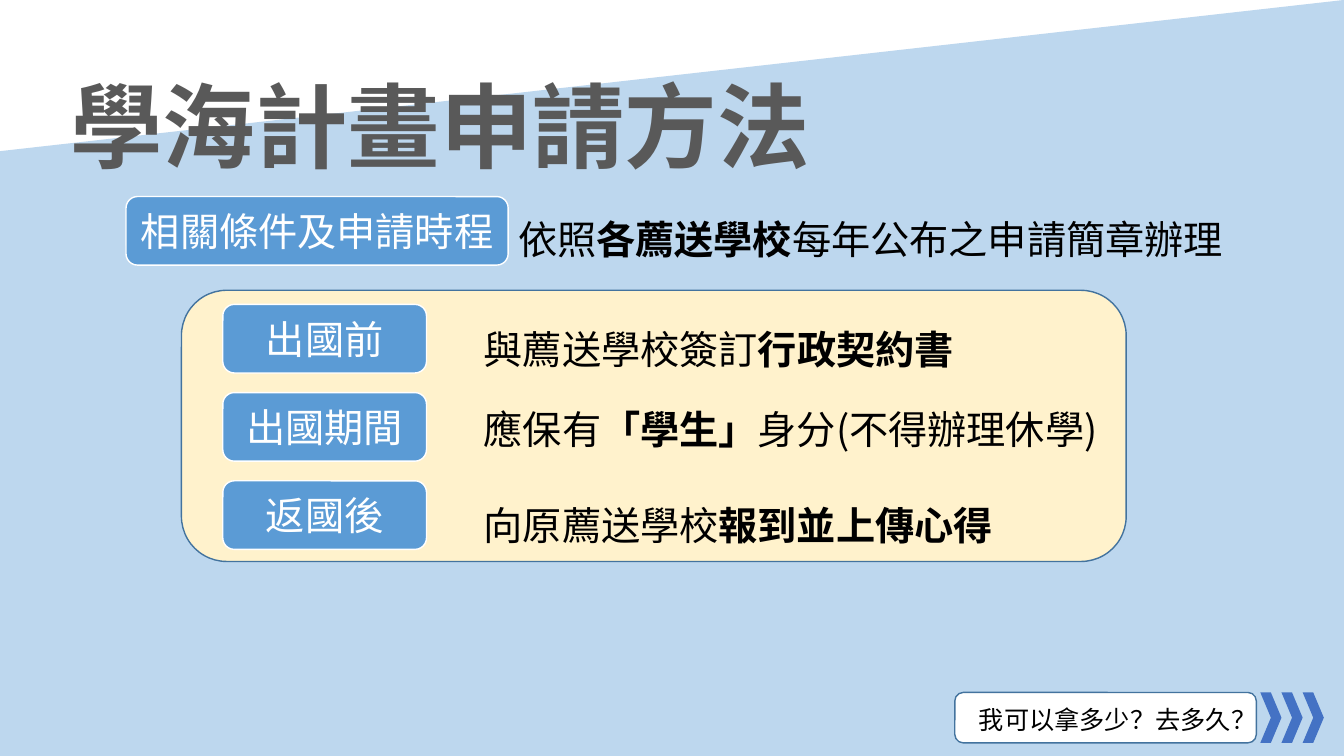
from lxml.etree import SubElement
from pptx import Presentation
from pptx.dml.color import RGBColor
from pptx.enum.shapes import MSO_SHAPE
from pptx.enum.text import MSO_ANCHOR, PP_ALIGN
from pptx.oxml.ns import qn
from pptx.util import Inches, Pt

# Content: a run is (text, bold)
TITLE = [("學海計畫申請方法", True)]
RULE_LABEL = [("相關條件及申請時程", False)]
RULE_TEXT = [("依照", False), ("各薦送學校", True), ("每年公布之申請簡章辦理", False)]
# Stage label, stage text, line spacing
STAGES = [
    ("出國前", [("與薦送學校簽訂", False), ("行政契約書", True)], 1.5),
    ("出國期間", [("應保有", False), ("「學生」", True), ("身分(不得辦理休學)", False)], 1),
    ("返國後", [("向原薦送學校", False), ("報到並上傳心得", True)], 1.5),
]
NEXT = [("我可以拿多少？去多久？", False)]

FONT = "Noto Sans CJK SC"
COLORS = {
    "sky": "BDD7EE", "title": "595959", "text": "000000", "white": "FFFFFF",
    "label": "5B9BD5", "edge": "43739E", "panel": "FFF2CC", "arrow": "4472C4",
}

# Layout in inches
W, H = 13.33, 7.5
LABEL_H = 0.68
STAGE_X, STAGE_TOP, STAGE_PITCH, STAGE_W = 2.21, 3.02, 0.875, 2.02
STAGE_TEXT_X, STAGE_TEXT_W = 4.7, 6.83
ARROW_X, ARROW_W, ARROWS = 12.5, 0.21, 3
FOOT_Y, FOOT_H = 6.87, 0.5

prs = Presentation()
prs.slide_width, prs.slide_height = Inches(W), Inches(H)
s = prs.slides.add_slide(prs.slide_layouts[6])


def rgb(name):
    return RGBColor.from_string(COLORS[name])


def write(sp, runs, size, color, align=PP_ALIGN.LEFT, spacing=None):
    p = sp.text_frame.paragraphs[0]
    p.alignment = align
    if spacing:
        p.line_spacing = float(spacing)
    for text, bold in runs:
        r = p.add_run()
        r.text = text
        r.font.size, r.font.bold, r.font.name = Pt(size), bold, FONT
        r.font.color.rgb = rgb(color)
        SubElement(r.font._element, qn("a:ea"), typeface=FONT)


def shape(kind, x, y, w, h, fill, line=None):
    sp = s.shapes.add_shape(kind, Inches(x), Inches(y), Inches(w), Inches(h))
    sp.shadow.inherit = False
    sp.fill.solid()
    sp.fill.fore_color.rgb = rgb(fill)
    if line:
        sp.line.color.rgb = rgb(line)
        sp.line.width = Pt(1)
    else:
        sp.line.fill.background()
    return sp


def label(runs, x, y, w):
    sp = shape(MSO_SHAPE.ROUNDED_RECTANGLE, x, y, w, LABEL_H, "label", "white")
    tf = sp.text_frame
    tf.word_wrap = True
    tf.margin_left = tf.margin_right = Inches(0.05)
    tf.vertical_anchor = MSO_ANCHOR.MIDDLE
    write(sp, runs, 28, "white", PP_ALIGN.CENTER)


def textbox(runs, x, y, w, h, size=28, color="text", wrap=True, **style):
    sp = s.shapes.add_textbox(Inches(x), Inches(y), Inches(w), Inches(h))
    sp.text_frame.word_wrap = wrap
    write(sp, runs, size, color, **style)


# Slanted background and title
shape(MSO_SHAPE.FLOWCHART_MANUAL_INPUT, 0, 0, W, H, "sky")
textbox(TITLE, 0.6, 0.64, 7.61, 1.21, 66, "title", wrap=False)

# General rule
textbox(RULE_TEXT, 5.04, 1.85, 7.37, 0.81, spacing=1.5)
label(RULE_LABEL, 1.25, 1.95, 3.79)

# Stages panel
shape(MSO_SHAPE.ROUNDED_RECTANGLE, 1.8, 2.88, 9.37, 2.69, "panel", "edge")
for i, (name, runs, spacing) in enumerate(STAGES):
    y = STAGE_TOP + i * STAGE_PITCH
    label([(name, False)], STAGE_X, y, STAGE_W)
    shift, h = (-0.08, 0.81) if spacing > 1 else (0.08, 0.57)
    textbox(runs, STAGE_TEXT_X, y + shift, STAGE_TEXT_W, h, spacing=spacing)

# Pointer to the next topic
shape(MSO_SHAPE.ROUNDED_RECTANGLE, 9.47, FOOT_Y, 2.99, FOOT_H, "white", "edge")
textbox(NEXT, 9.56, 6.94, 2.8, 0.4, 18, align=PP_ALIGN.CENTER)
for i in range(ARROWS):
    shape(MSO_SHAPE.CHEVRON, ARROW_X + i * ARROW_W, FOOT_Y, ARROW_W, FOOT_H, "arrow")

prs.save("out.pptx")
